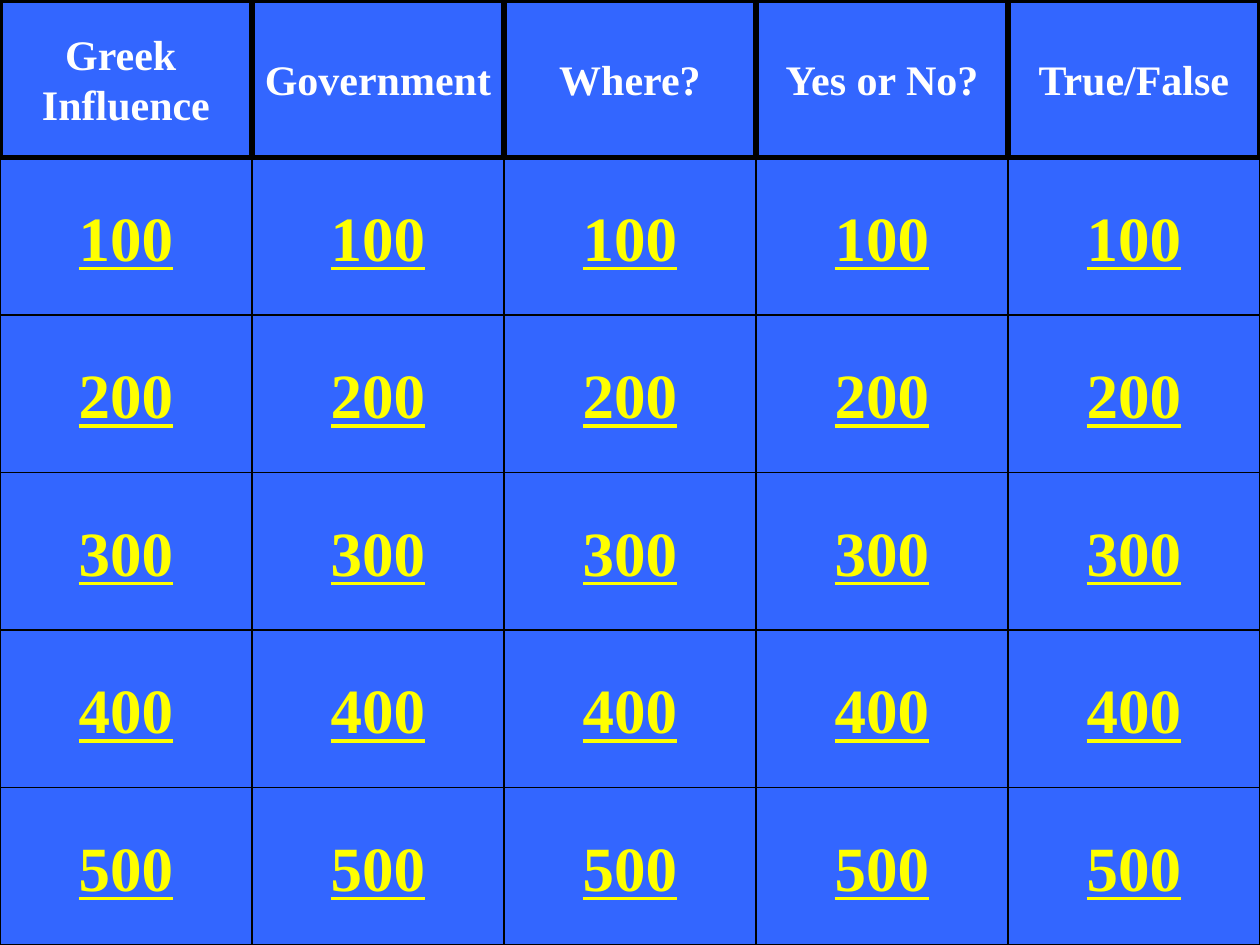
"""Build a quiz board with five categories and five point values."""
import pptx
import pptx.dml.color
import pptx.enum.shapes
import pptx.enum.text
import pptx.util

CATEGORIES = ["Greek \nInfluence", "Government", "Where?", "Yes or No?", "True/False"]
POINTS = ["100", "200", "300", "400", "500"]
BOARD_BLUE, BORDER, POINTS_YELLOW, HEADING_WHITE = "3366FF", "000000", "FFFF00", "FFFFFF"
FONT = "Times New Roman"
BOARD_WIDTH, BOARD_HEIGHT = pptx.util.Cm(25.4), pptx.util.Cm(19.05)
TILE_WIDTH = BOARD_WIDTH // len(CATEGORIES)
TILE_HEIGHT = BOARD_HEIGHT // (len(POINTS) + 1)
SHAPES = pptx.enum.shapes.MSO_SHAPE


def paint(fill, color):
    fill.solid()
    fill.fore_color.rgb = pptx.dml.color.RGBColor.from_string(color)


def add_tile(slide, column, row, wording, outline, border_width, size, color, underline):
    tile = slide.shapes.add_shape(
        outline, column * TILE_WIDTH, row * TILE_HEIGHT, TILE_WIDTH, TILE_HEIGHT
    )
    tile.shadow.inherit = False
    paint(tile.fill, BOARD_BLUE)
    paint(tile.line.fill, BORDER)
    tile.line.width = pptx.util.Pt(border_width)
    frame = tile.text_frame
    frame.word_wrap = False
    frame.vertical_anchor = pptx.enum.text.MSO_ANCHOR.MIDDLE
    frame.text = wording
    for paragraph in frame.paragraphs:
        paragraph.alignment = pptx.enum.text.PP_ALIGN.CENTER
        paragraph.font.name = FONT
        paragraph.font.size = pptx.util.Pt(size)
        paragraph.font.bold = True
        paragraph.font.underline = underline
        paint(paragraph.font.fill, color)


def main():
    deck = pptx.Presentation()
    deck.slide_width, deck.slide_height = BOARD_WIDTH, BOARD_HEIGHT
    board = deck.slides.add_slide(deck.slide_layouts[6])
    paint(board.background.fill, BOARD_BLUE)

    for column in range(len(CATEGORIES)):
        for row, points in enumerate(POINTS, start=1):
            add_tile(board, column, row, points, SHAPES.ACTION_BUTTON_CUSTOM,
                     0.75, 36, POINTS_YELLOW, True)
    for column, category in enumerate(CATEGORIES):
        add_tile(board, column, 0, category, SHAPES.RECTANGLE,
                 3, 24, HEADING_WHITE, False)

    deck.save("out.pptx")


if __name__ == "__main__":
    main()
